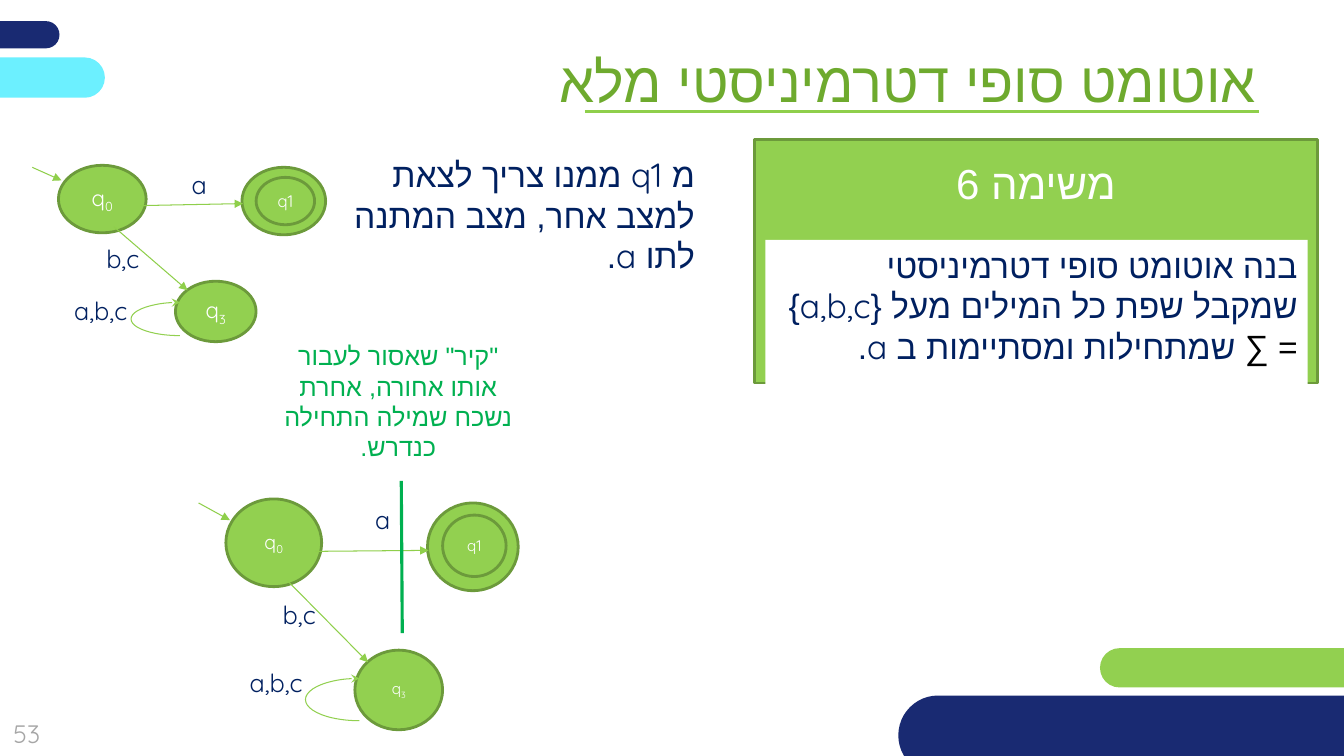
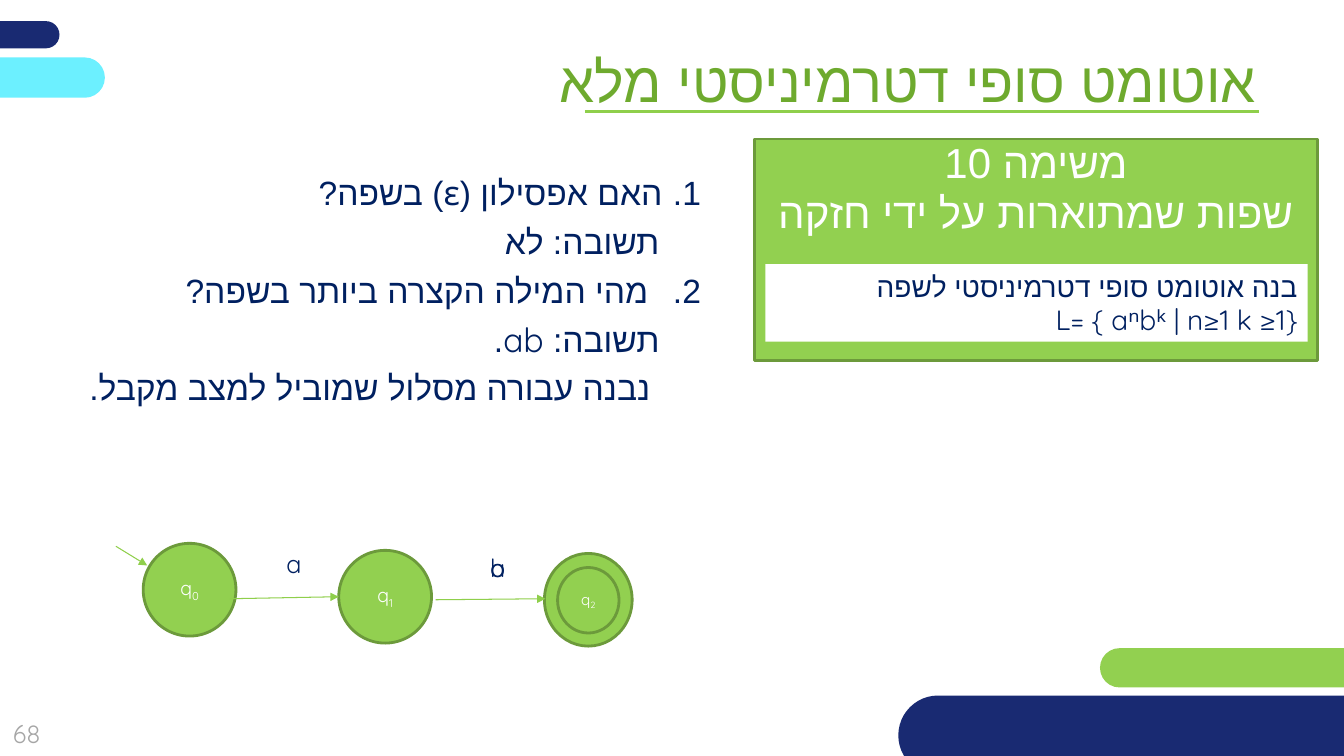
from dataclasses import dataclass
from typing import Any, Optional

import lxml.etree
import pptx
import pptx.dml.color
import pptx.enum.shapes
import pptx.enum.text
import pptx.oxml.ns
import pptx.util

RGB = pptx.dml.color.RGBColor
SHAPES = pptx.enum.shapes.MSO_SHAPE
ALIGN = pptx.enum.text.PP_ALIGN
ANCHOR = pptx.enum.text.MSO_ANCHOR
qn = pptx.oxml.ns.qn

EMU_PER_PX = 9144  # 100 px to the inch

NAVY = RGB(0x19, 0x2A, 0x72)
CYAN = RGB(0x6C, 0xF0, 0xFF)
GREEN = RGB(0x92, 0xD0, 0x50)
EDGE_GREEN = RGB(0x8F, 0xCF, 0x4B)
OUTLINE_GREEN = RGB(0x6C, 0x9A, 0x3B)
TITLE_GREEN = RGB(0x6E, 0xAA, 0x2E)
WALL_GREEN = RGB(0x00, 0xB0, 0x50)
INK = RGB(0x00, 0x20, 0x60)
BLACK = RGB(0x00, 0x00, 0x00)
WHITE = RGB(0xFF, 0xFF, 0xFF)
GREY = RGB(0xA6, 0xA6, 0xA6)

LATIN_FONT = "Quicksand"
HEBREW_FONT = "Arial"
TITLE = "אוטומט סופי דטרמיניסטי מלא"


@dataclass(frozen=True)
class Box:
    left: int
    top: int
    width: int
    height: int


@dataclass(frozen=True)
class Style:
    size: int
    color: RGB = INK
    align: ALIGN = ALIGN.RIGHT
    rtl: bool = True
    space_after: int = 0


@dataclass(frozen=True)
class Run:
    text: str
    color: Optional[RGB] = None
    subscript: bool = False


@dataclass(frozen=True)
class Para:
    runs: tuple[Run, ...]
    indent: int = 0
    number: int = 0


@dataclass(frozen=True)
class Band:
    box: Box
    color: RGB


@dataclass(frozen=True)
class State:
    box: Box
    letter: str
    index: str
    size: int
    inner: Optional[Box] = None  # second ring of an accepting state


@dataclass(frozen=True)
class Edge:
    x1: int
    y1: int
    x2: int
    y2: int


@dataclass(frozen=True)
class Label:
    box: Box
    text: str


@dataclass(frozen=True)
class Automaton:
    states: tuple[State, ...]
    edges: tuple[Edge, ...]
    labels: tuple[Label, ...]
    loops: tuple[Box, ...] = ()


BANDS = (
    Band(Box(-266, 21, 325, 27), NAVY),
    Band(Box(1091, 643, 521, 39), GREEN),
    Band(Box(-221, 57, 325, 40), CYAN),
    Band(Box(891, 690, 566, 79), NAVY),
)

TITLE_STYLE = Style(40, TITLE_GREEN)
PAGE_STYLE = Style(18, GREY, ALIGN.CENTER, rtl=False)
HEADING_STYLE = Style(30, WHITE, ALIGN.CENTER)
LABEL_STYLE = Style(18)
BODY_STYLE = Style(24)
FORMULA_STYLE = Style(20)
WALL_STYLE = Style(18, WALL_GREEN, ALIGN.CENTER)
LIST_STYLE = Style(24, align=ALIGN.JUSTIFY, space_after=6)

COMPACT = Automaton(
    states=(
        State(Box(58, 164, 87, 67), "q", "0", 16),
        State(Box(240, 166, 83, 67), "q1", "", 12, Box(254, 176, 58, 47)),
        State(Box(174, 279, 80, 60), "q", "3", 16),
    ),
    edges=(Edge(32, 166, 61, 179), Edge(139, 204, 241, 202), Edge(113, 225, 186, 288)),
    labels=(
        Label(Box(174, 163, 41, 38), "a"),
        Label(Box(15, 288, 121, 38), "a,b,c"),
        Label(Box(27, 236, 121, 38), "b,c"),
    ),
    loops=(Box(130, 300, 97, 33),),
)
WALLED = Automaton(
    states=(
        State(Box(224, 495, 95, 87), "q", "0", 14),
        State(Box(424, 499, 90, 87), "q1", "", 11, Box(439, 511, 63, 61)),
        State(Box(352, 645, 87, 79), "q", "3", 11),
    ),
    edges=(Edge(197, 499, 228, 516), Edge(313, 547, 425, 546), Edge(285, 576, 365, 657)),
    labels=(
        Label(Box(352, 495, 45, 50), "a"),
        Label(Box(178, 657, 132, 50), "a,b,c"),
        Label(Box(191, 590, 132, 50), "b,c"),
    ),
    loops=(Box(303, 673, 107, 42),),
)
CHAIN = Automaton(
    states=(
        State(Box(142, 539, 92, 92), "q", "0", 14),
        State(Box(336, 546, 92, 92), "q", "1", 14),
        State(Box(540, 549, 87, 92), "q", "2", 11, Box(553, 563, 61, 65)),
    ),
    edges=(Edge(115, 542, 146, 561), Edge(228, 594, 336, 592), Edge(432, 595, 541, 594)),
    labels=(
        Label(Box(453, 543, 58, 52), "a"),
        Label(Box(453, 543, 58, 40), "b"),
        Label(Box(265, 539, 44, 52), "a"),
    ),
)


def px(length: int) -> pptx.util.Emu:
    return pptx.util.Emu(length * EMU_PER_PX)


def place(box: Box) -> tuple[pptx.util.Emu, ...]:
    return px(box.left), px(box.top), px(box.width), px(box.height)


def plain(text: str, indent: int = 0, number: int = 0) -> Para:
    return Para((Run(text),), indent, number)


def write(frame: Any, paras: list[Para], style: Style) -> None:
    frame.word_wrap = True
    for position, para in enumerate(paras):
        paragraph = frame.add_paragraph() if position else frame.paragraphs[0]
        paragraph.alignment = style.align
        paragraph.space_after = pptx.util.Pt(style.space_after)
        properties = paragraph._p.get_or_add_pPr()
        properties.set("rtl", str(int(style.rtl)))
        if para.indent:
            properties.set("marL", str(px(para.indent)))
            properties.set("indent", str(px(-para.indent if para.number else 0)))
        if para.number:
            lxml.etree.SubElement(properties, qn("a:buAutoNum"),
                                  type="arabicPeriod", startAt=str(para.number))
        for part in para.runs:
            run = paragraph.add_run()
            run.text = part.text
            run.font.size = pptx.util.Pt(style.size)
            run.font.name = LATIN_FONT
            run.font.color.rgb = part.color or style.color
            run_properties = run.font._element
            lxml.etree.SubElement(run_properties, qn("a:cs"), typeface=HEBREW_FONT)
            if part.subscript:
                run_properties.set("baseline", "-25000")


def add_text(slide: Any, box: Box, paras: list[Para], style: Style) -> Any:
    frame = slide.shapes.add_textbox(*place(box)).text_frame
    write(frame, paras, style)
    return frame


def add_solid(slide: Any, kind: SHAPES, box: Box, fill: RGB,
              outline: Optional[RGB] = None) -> Any:
    solid = slide.shapes.add_shape(kind, *place(box))
    solid.shadow.inherit = False
    solid.fill.solid()
    solid.fill.fore_color.rgb = fill
    if outline is None:
        solid.line.fill.background()
    else:
        solid.line.color.rgb = outline
        solid.line.width = pptx.util.Pt(2)
    return solid


def add_arrowhead(drawn: Any, kind: str) -> None:
    outline = drawn.element.spPr.find(qn("a:ln"))
    lxml.etree.SubElement(outline, qn("a:tailEnd"), type=kind)


def add_line(slide: Any, edge: Edge, color: RGB = EDGE_GREEN,
             width: float = 2.25, arrow: bool = False) -> None:
    line = slide.shapes.add_connector(
        pptx.enum.shapes.MSO_CONNECTOR.STRAIGHT,
        px(edge.x1), px(edge.y1), px(edge.x2), px(edge.y2))
    line.line.color.rgb = color
    line.line.width = pptx.util.Pt(width)
    if arrow:
        add_arrowhead(line, "triangle")
    lxml.etree.SubElement(line.element.spPr, qn("a:effectLst"))


def add_loop(slide: Any, box: Box) -> None:
    """Draw the left half of an ellipse, from its bottom up to an arrowhead."""
    loop = slide.shapes.add_shape(SHAPES.ARC, *place(box))
    loop.adjustments[0], loop.adjustments[1] = 54, 162  # 90 and 270 degrees
    loop.shadow.inherit = False
    loop.fill.background()
    loop.line.color.rgb = GREEN
    loop.line.width = pptx.util.Pt(0.75)
    add_arrowhead(loop, "stealth")


def add_state(slide: Any, state: State) -> None:
    for ring in filter(None, (state.box, state.inner)):
        circle = add_solid(slide, SHAPES.OVAL, ring, GREEN, OUTLINE_GREEN)
    frame = circle.text_frame
    frame.margin_left = frame.margin_right = frame.margin_top = frame.margin_bottom = 0
    frame.vertical_anchor = ANCHOR.MIDDLE
    runs = (Run(state.letter),)
    if state.index:
        runs += (Run(state.index, subscript=True),)
    write(frame, [Para(runs)], Style(state.size, WHITE, ALIGN.CENTER))


def add_automaton(slide: Any, automaton: Automaton) -> None:
    for state in automaton.states:
        add_state(slide, state)
    for edge in automaton.edges:
        add_line(slide, edge, width=0.75, arrow=True)
    for loop in automaton.loops:
        add_loop(slide, loop)
    for label in automaton.labels:
        add_text(slide, label.box, [plain(label.text)], LABEL_STYLE)


def add_task(slide: Any, height: int, below: int, heading: list[Para],
             panel: Box, body: list[Para], style: Style) -> None:
    """Draw the green task card; its heading stays above the lowest `below` px."""
    card = add_solid(slide, SHAPES.RECTANGLE, Box(748, 138, 559, height), GREEN, OUTLINE_GREEN)
    frame = card.text_frame
    frame.vertical_anchor = ANCHOR.MIDDLE
    frame.margin_top, frame.margin_bottom = 0, px(below)
    write(frame, heading, HEADING_STYLE)
    task = add_solid(slide, SHAPES.RECTANGLE, panel, WHITE).text_frame
    task.vertical_anchor = ANCHOR.TOP
    write(task, body, style)


def add_base_slide(deck: Any, page: int) -> Any:
    slide = deck.slides.add_slide(deck.slide_layouts[6])
    for band in BANDS:
        add_solid(slide, SHAPES.ROUNDED_RECTANGLE, band.box, band.color).adjustments[0] = 0.5
    number = add_text(slide, Box(-18, 699, 89, 57), [plain(str(page))], PAGE_STYLE)
    number.vertical_anchor = ANCHOR.MIDDLE
    add_line(slide, Edge(580, 111, 1249, 111))
    add_text(slide, Box(440, 41, 816, 77), [plain(TITLE)], TITLE_STYLE)
    return slide


def add_wall_slide(deck: Any) -> None:
    slide = add_base_slide(deck, 53)
    language = Para((
        Run("בנה אוטומט סופי דטרמיניסטי שמקבל שפת כל המילים מעל {a,b,c}"),
        Run(" = ∑", BLACK),
        Run(" שמתחילות ומסתיימות ב a."),
    ))
    add_task(slide, 242, 156, [plain("משימה 6")], Box(759, 238, 538, 172), [language], BODY_STYLE)
    add_automaton(slide, COMPACT)
    add_text(slide, Box(324, 148, 375, 131),
             [plain("מ q1 ממנו צריך לצאת למצב אחר, מצב המתנה לתו a.")], BODY_STYLE)
    add_automaton(slide, WALLED)
    add_line(slide, Edge(398, 477, 399, 628), WALL_GREEN)
    add_text(slide, Box(265, 333, 260, 131),
             [plain('"קיר" שאסור לעבור אותו אחורה, אחרת נשכח שמילה התחילה כנדרש.')], WALL_STYLE)


def add_power_slide(deck: Any) -> None:
    slide = add_base_slide(deck, 68)
    add_task(slide, 220, 125, [plain("משימה 10"), plain("שפות שמתוארות על ידי חזקה")],
             Box(759, 262, 538, 77),
             [plain("בנה אוטומט סופי דטרמיניסטי לשפה"), plain("L= { aⁿbᵏ | n≥1 k ≥1}")],
             FORMULA_STYLE)
    add_text(slide, Box(37, 166, 668, 246), [
        plain("האם אפסילון (ε) בשפה?", indent=38, number=1),
        plain("תשובה: לא", indent=41),
        plain("מהי המילה הקצרה ביותר בשפה?", indent=52, number=2),
        plain("תשובה: ab.", indent=41),
        plain("נבנה עבורה מסלול שמוביל למצב מקבל.", indent=50),
    ], LIST_STYLE)
    add_automaton(slide, CHAIN)


def main() -> None:
    deck = pptx.Presentation()
    deck.slide_width, deck.slide_height = px(1333), px(750)
    add_wall_slide(deck)
    add_power_slide(deck)
    deck.save("out.pptx")


if __name__ == "__main__":
    main()
